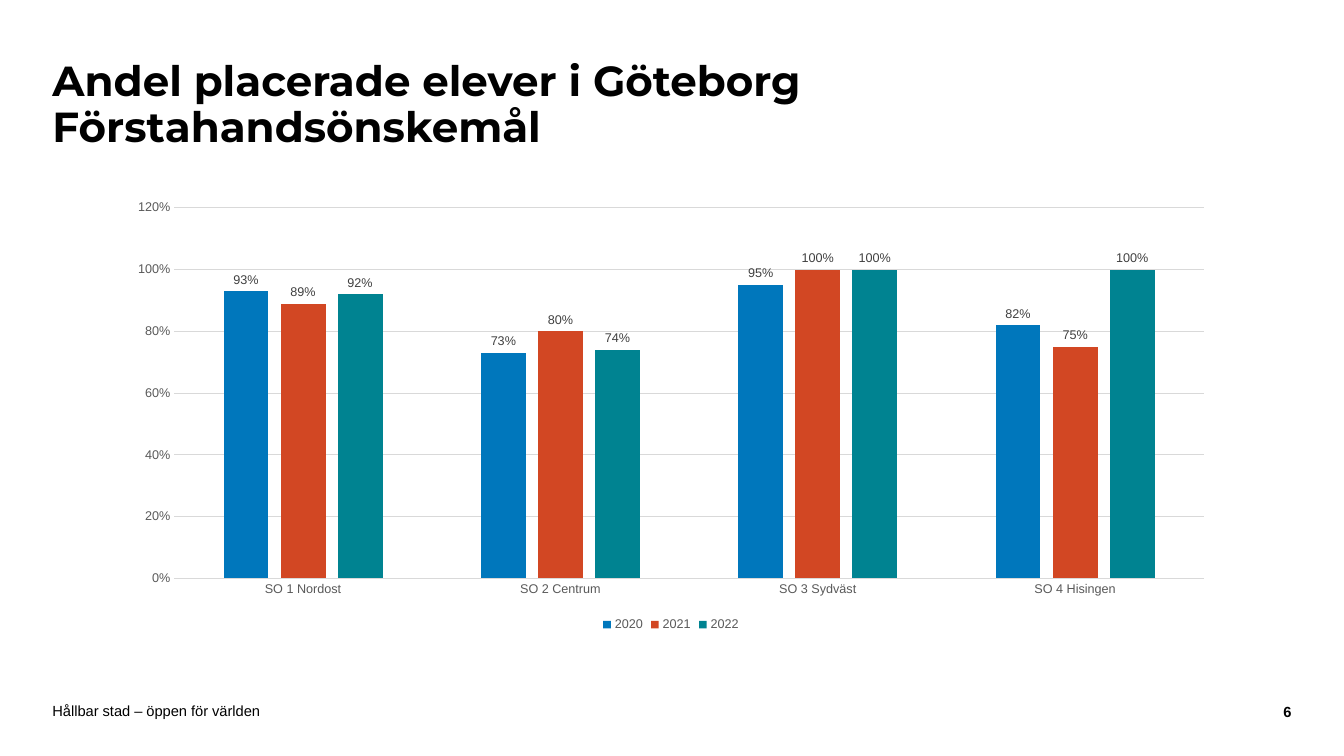
import pptx
import pptx.chart.data
import pptx.dml.color
import pptx.enum.chart
import pptx.enum.text
import pptx.util

Inches = pptx.util.Inches
ChartEnum = pptx.enum.chart
TextEnum = pptx.enum.text

COLOURS = {
    "text": "000000",
    "axis": "595959",
    "label": "404040",
    "grid": "D9D9D9",
    "2020": "0077BC",
    "2021": "D24723",
    "2022": "008391",
}
DISTRICTS = ["SO 1 Nordost", "SO 2 Centrum", "SO 3 Sydväst", "SO 4 Hisingen"]
SHARES = {
    "2020": [0.93, 0.73, 0.95, 0.82],
    "2021": [0.89, 0.80, 1, 0.75],
    "2022": [0.92, 0.74, 1, 1],
}


def set_values(target, **values):
    for name, value in values.items():
        setattr(target, name, value)


class SlideBuilder:
    """Holds the style and the current slide."""

    def __init__(self, slide, body_font="Arial", title_font="Montserrat"):
        self.slide = slide
        self.body_font = body_font
        self.title_font = title_font

    def colour(self, name):
        return pptx.dml.color.RGBColor.from_string(COLOURS[name])

    def style_font(self, font, size, colour="text", bold=False, name=None):
        set_values(font, name=name or self.body_font, size=pptx.util.Pt(size), bold=bold)
        font.color.rgb = self.colour(colour)

    def style_line(self, line):
        line.color.rgb = self.colour("grid")
        line.width = pptx.util.Pt(0.75)

    def style_frame(self, frame, margin=0):
        set_values(
            frame,
            word_wrap=True,
            auto_size=TextEnum.MSO_AUTO_SIZE.NONE,
            vertical_anchor=TextEnum.MSO_ANCHOR.MIDDLE,
            margin_left=0,
            margin_right=0,
            margin_top=Inches(margin),
            margin_bottom=Inches(margin),
        )

    def title(self, lines, left, top, width, height):
        title = self.slide.shapes.title
        set_values(title, left=Inches(left), top=Inches(top),
                   width=Inches(width), height=Inches(height))
        self.style_frame(title.text_frame, margin=0.05)
        para = title.text_frame.paragraphs[0]
        set_values(para, alignment=TextEnum.PP_ALIGN.LEFT, line_spacing=0.9,
                   space_before=pptx.util.Pt(0))
        for index, line in enumerate(lines):
            if index:
                para.add_line_break()
            span = para.add_run()
            span.text = line
            self.style_font(span.font, 30, bold=True, name=self.title_font)

    def footer(self, text, left, top, width, height, align, bold=False):
        box = self.slide.shapes.add_textbox(*map(Inches, (left, top, width, height)))
        self.style_frame(box.text_frame)
        para = box.text_frame.paragraphs[0]
        para.alignment = align
        span = para.add_run()
        span.text = text
        self.style_font(span.font, 10.5, bold=bold)

    def column_chart(self, categories, series_values, left, top, width, height):
        data = pptx.chart.data.CategoryChartData(number_format="0%")
        data.categories = categories
        for name, values in series_values.items():
            data.add_series(name, values)
        chart = self.slide.shapes.add_chart(
            ChartEnum.XL_CHART_TYPE.COLUMN_CLUSTERED,
            *map(Inches, (left, top, width, height)), data).chart
        self.style_font(chart.font, 10)
        set_values(chart, has_title=False, has_legend=True)

        # Legend
        set_values(chart.legend, position=ChartEnum.XL_LEGEND_POSITION.BOTTOM,
                   include_in_layout=False)
        self.style_font(chart.legend.font, 9, "axis")

        # Axes
        for axis in (chart.category_axis, chart.value_axis):
            set_values(axis, major_tick_mark=ChartEnum.XL_TICK_MARK.NONE,
                       minor_tick_mark=ChartEnum.XL_TICK_MARK.NONE)
            self.style_font(axis.tick_labels.font, 9, "axis")
        self.style_line(chart.category_axis.format.line)
        value_axis = chart.value_axis
        set_values(value_axis, minimum_scale=0, maximum_scale=1.2, major_unit=0.2)
        set_values(value_axis.tick_labels, number_format="0%",
                   number_format_is_linked=False)
        value_axis.format.line.fill.background()
        self.style_line(value_axis.major_gridlines.format.line)

        # Columns and their labels
        plot = chart.plots[0]
        set_values(plot, gap_width=219, overlap=-27, vary_by_categories=False)
        for series in plot.series:
            series.format.fill.solid()
            series.format.fill.fore_color.rgb = self.colour(series.name)
            labels = series.data_labels
            set_values(labels, show_value=True, number_format="0%",
                       number_format_is_linked=False,
                       position=ChartEnum.XL_LABEL_POSITION.OUTSIDE_END)
            self.style_font(labels.font, 9, "label")


def main():
    deck = pptx.Presentation()
    set_values(deck, slide_width=Inches(13.33), slide_height=Inches(7.5))
    page = SlideBuilder(deck.slides.add_slide(deck.slide_layouts[5]))

    # Heading
    page.title(["Andel placerade elever i Göteborg", "Förstahandsönskemål"],
               0.52, 0.42, 10.03, 1.26)

    # Share of placed pupils by district and year
    page.column_chart(DISTRICTS, SHARES, 1.15, 1.9, 11.01, 4.41)

    # Footer and page number
    page.footer("Hållbar stad – öppen för världen", 0.52, 6.97, 9.45, 0.16,
                TextEnum.PP_ALIGN.LEFT)
    page.footer("6", 12.17, 6.98, 0.64, 0.16, TextEnum.PP_ALIGN.RIGHT, bold=True)

    deck.save("out.pptx")


if __name__ == "__main__":
    main()
